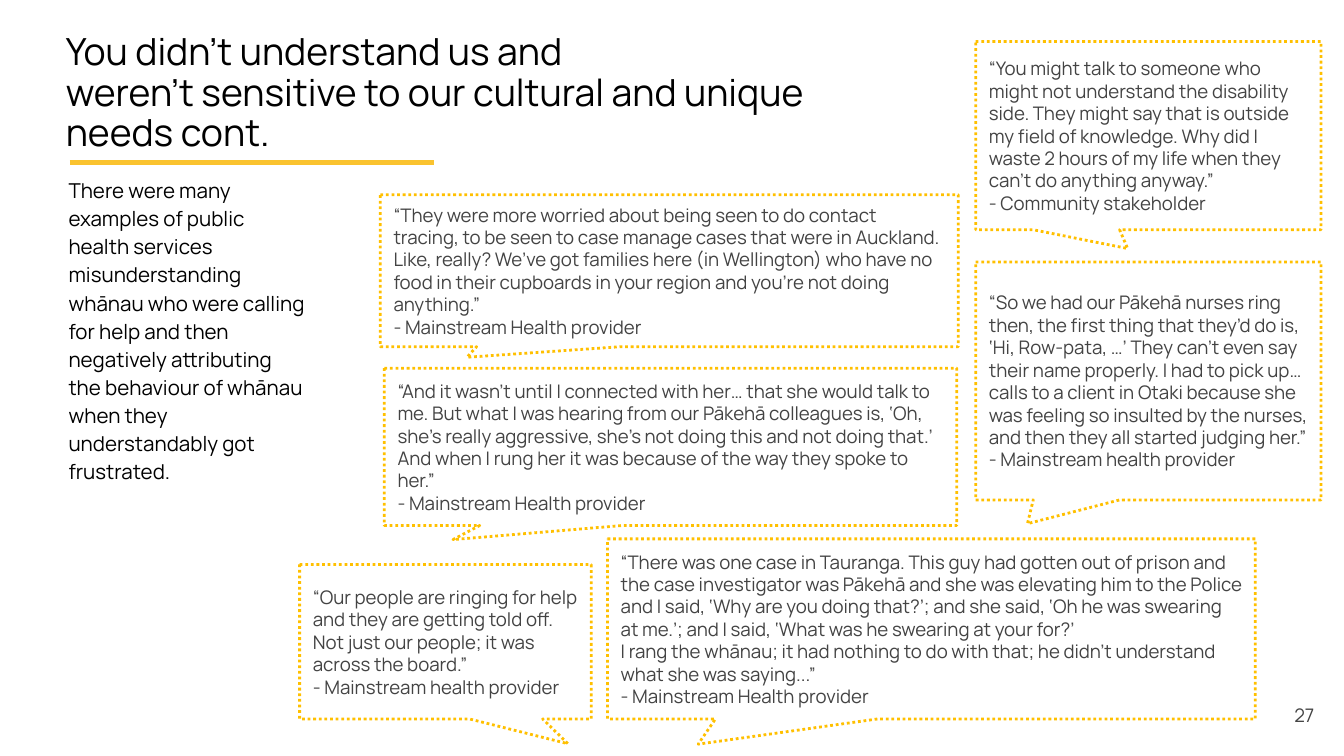
from pptx import Presentation
from pptx.dml.color import RGBColor
from pptx.enum.dml import MSO_LINE
from pptx.enum.shapes import MSO_CONNECTOR, MSO_SHAPE
from pptx.enum.text import MSO_ANCHOR as Anchor, MSO_AUTO_SIZE, PP_ALIGN as Align
from pptx.oxml.ns import qn
from pptx.util import Inches, Pt
from lxml import etree

# Content
TITLE = "You didn’t understand us and \nweren’t sensitive to our cultural and unique needs cont."
SUMMARY = (
    "There were many examples of public health services misunderstanding whānau "
    "who were calling for help and then negatively attributing the behaviour of "
    "whānau when they understandably got frustrated."
)
PAGE_NUMBER = "27"

# Quotes: (left, top, width, height), pointer tip (x, y), paragraphs
QUOTES = [
    ((2.83, 1.45, 4.3, 1.13), (-0.35, 0.57), [
        "“They were more worried about being seen to do contact tracing, to be seen to "
        "case manage cases that were in Auckland. Like, really? We’ve got families here "
        "(in Wellington) who have no food in their cupboards in your region and you’re "
        "not doing anything.”",
        "- Mainstream Health provider"]),
    ((2.86, 2.74, 4.26, 1.17), (-0.38, 0.59), [
        "“And it wasn’t until I connected with her… that she would talk to me. But what "
        "I was hearing from our Pākehā colleagues is, ‘Oh, she’s really aggressive, "
        "she’s not doing this and not doing that.’ And when I rung her it was because "
        "of the way they spoke to her.”",
        "- Mainstream Health provider"]),
    ((7.26, 0.31, 2.57, 1.4), (-0.06, 0.6), [
        "“You might talk to someone who might not understand the disability side. They "
        "might say that is outside my field of knowledge. Why did I waste 2 hours of my "
        "life when they can’t do anything anyway.”",
        "- Community stakeholder"]),
    ((7.26, 1.95, 2.57, 1.77), (-0.35, 0.6), [
        "“So we had our Pākehā nurses ring then, the first thing that they’d do is, "
        "‘Hi, Row-pata, …’ They can’t even say their name properly. I had to pick up… "
        "calls to a client in Otaki because she was feeling so insulted by the nurses, "
        "and then they all started judging her.”",
        "- Mainstream health provider"]),
    ((2.23, 4.2, 2.17, 1.15), (0.42, 0.66), [
        "“Our people are ringing for help and they are getting told off. Not just our "
        "people; it was across the board.”",
        "- Mainstream health provider"]),
    ((4.52, 4.01, 4.82, 1.34), (-0.36, 0.64), [
        "“There was one case in Tauranga. This guy had gotten out of prison and the case "
        "investigator was Pākehā and she was elevating him to the Police and I said, "
        "‘Why are you doing that?’; and she said, ‘Oh he was swearing at me.’; and I "
        "said, ‘What was he swearing at your for?’ \n"
        "I rang the whānau; it had nothing to do with that; he didn’t understand what "
        "she was saying...”",
        "- Mainstream Health provider"]),
]

# Formats
FONT = "Manrope"
BLACK, GREY, WHITE, AMBER, GOLD = "000000", "434343", "FFFFFF", "FFC000", "FAC32F"
PLAIN = {"alignment": Align.LEFT, "space_before": Pt(0)}
TITLE_FORMAT = PLAIN | {"line_spacing": 0.9}
SUMMARY_FORMAT = PLAIN | {"line_spacing": 1.14, "space_before": Pt(6)}
NUMBER_FORMAT = PLAIN | {"alignment": Align.CENTER}


def color(value):
    return RGBColor.from_string(value)


def place(shape, box):
    for name, value in zip(("left", "top", "width", "height"), box):
        setattr(shape, name, Inches(value))


def fill_white(shape):
    shape.fill.solid()
    shape.fill.fore_color.rgb = color(WHITE)


def write(shape, texts, size, ink, paragraph_format, anchor, margin):
    frame = shape.text_frame
    inset = Inches(margin)
    frame_format = {
        "word_wrap": True, "auto_size": MSO_AUTO_SIZE.NONE, "vertical_anchor": anchor,
        "margin_left": inset, "margin_top": inset,
        "margin_right": inset, "margin_bottom": inset,
    }
    for name, value in frame_format.items():
        setattr(frame, name, value)
    for index, text in enumerate(texts):
        paragraph = frame.add_paragraph() if index else frame.paragraphs[0]
        paragraph.text = text
        for name, value in paragraph_format.items():
            setattr(paragraph, name, value)
        for run in paragraph.runs:
            run.font.name, run.font.size = FONT, Pt(size)
            run.font.color.rgb = color(ink)
        # Line breaks take the text size, so they do not stretch the line
        for line_break in paragraph._p.findall(qn("a:br")):
            etree.SubElement(line_break, qn("a:rPr"), sz=str(size * 100))


# Widescreen page, 16:9
presentation = Presentation()
presentation.slide_width = Inches(10)
presentation.slide_height = presentation.slide_width * 9 // 16
slide = presentation.slides.add_slide(presentation.slide_layouts[1])
shapes = slide.shapes

# Title and summary
title, summary = slide.placeholders
place(title, (0.49, 0, 5.6, 1.15))
fill_white(title)
write(title, [TITLE], 20, BLACK, TITLE_FORMAT, Anchor.BOTTOM, 0)
place(summary, (0.51, 1.3, 1.77, 2.69))
write(summary, [SUMMARY], 11, BLACK, SUMMARY_FORMAT, Anchor.TOP, 0)
properties = summary.text_frame.paragraphs[0]._p.get_or_add_pPr()
properties.set("marL", "0")
properties.set("indent", "0")
etree.SubElement(properties, qn("a:buNone"))

# Rule under the title
rule = shapes.add_connector(
    MSO_CONNECTOR.STRAIGHT, Inches(0.52), Inches(1.21), Inches(3.23), Inches(1.21))
rule.line.color.rgb, rule.line.width = color(GOLD), Pt(3)
etree.SubElement(rule._element.spPr, qn("a:effectLst"))

# Quote callouts
for box, tip, texts in QUOTES:
    callout = shapes.add_shape(MSO_SHAPE.RECTANGULAR_CALLOUT, *map(Inches, box))
    callout.shadow.inherit = False
    callout.adjustments[0], callout.adjustments[1] = tip
    fill_white(callout)
    line = callout.line
    line.color.rgb, line.width, line.dash_style = color(AMBER), Pt(1.5), MSO_LINE.ROUND_DOT
    write(callout, texts, 10, GREY, PLAIN, Anchor.MIDDLE, 0.1)

# Page number
number = shapes.add_textbox(*map(Inches, (9.41, 5.02, 0.59, 0.6)))
write(number, [PAGE_NUMBER], 10, GREY, NUMBER_FORMAT, Anchor.MIDDLE, 0.1)

presentation.save("out.pptx")
